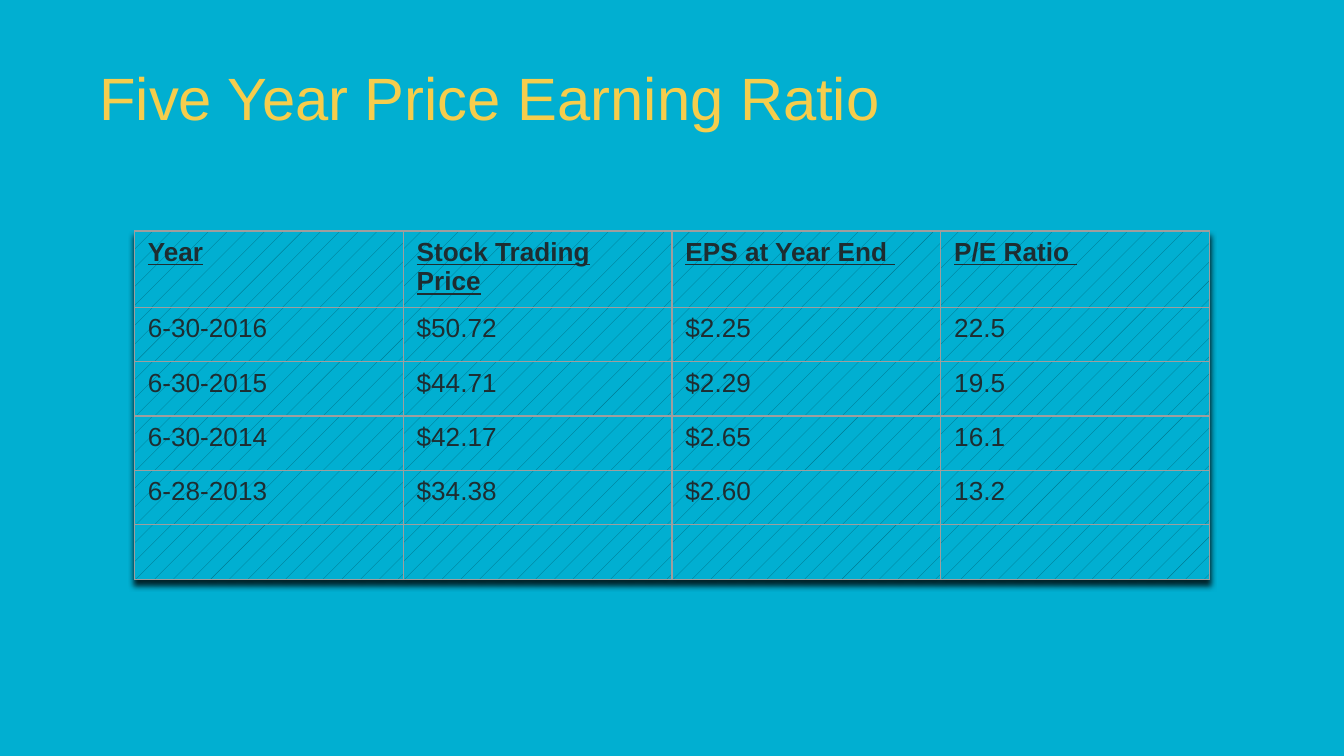
from lxml import etree
from pptx import Presentation
from pptx.dml.color import RGBColor
from pptx.enum.dml import MSO_PATTERN
from pptx.enum.text import MSO_ANCHOR, PP_ALIGN
from pptx.oxml.ns import qn
from pptx.util import Pt

DOTS = MSO_PATTERN.PERCENT_5
BOTTOM = MSO_ANCHOR.BOTTOM
LEFT = PP_ALIGN.LEFT

TEAL = RGBColor(0x01, 0xAF, 0xD1)
DARK_TEAL = RGBColor(0x00, 0x6F, 0x85)
YELLOW = RGBColor(0xF6, 0xCD, 0x4C)
INK = RGBColor(0x1E, 0x2D, 0x31)
GREY = RGBColor(0x9E, 0x9E, 0x9E)
BLACK = RGBColor(0, 0, 0)

ROWS = [
    ("Year", "Stock Trading Price", "EPS at Year End ", "P/E Ratio "),
    ("6-30-2016", "$50.72", "$2.25", "22.5"),
    ("6-30-2015", "$44.71", "$2.29", "19.5"),
    ("6-30-2014", "$42.17", "$2.65", "16.1"),
    ("6-28-2013", "$34.38", "$2.60", "13.2"),
    ("", "", "", ""),
]


def add_color(parent, color):
    fill = etree.SubElement(parent, qn("a:solidFill"))
    etree.SubElement(fill, qn("a:srgbClr"), val=str(color))


class Deck:
    font = "Arial"

    def __init__(self, width, height):
        self.prs = Presentation()
        self.prs.slide_width, self.prs.slide_height = Pt(width), Pt(height)

    def add_slide(self, color):
        self.s = self.prs.slides.add_slide(self.prs.slide_layouts[5])
        self.s.background.fill.solid()
        self.s.background.fill.fore_color.rgb = color

    def style(self, p, size, color, bold=False, underline=False):
        p.alignment = LEFT
        for font in [p.font] + [r.font for r in p.runs]:
            font.name, font.size = self.font, Pt(size)
            font.bold, font.underline = bold, underline
            font.color.rgb = color

    def title(self, text, x, y, w, h):
        sp = self.s.shapes.title
        sp.left, sp.top, sp.width, sp.height = Pt(x), Pt(y), Pt(w), Pt(h)
        tf = sp.text_frame
        tf.text = text
        tf.word_wrap = True
        tf.vertical_anchor = BOTTOM
        self.style(tf.paragraphs[0], 32, YELLOW)

    def borders(self, cell):
        tcPr = cell._tc.get_or_add_tcPr()
        for i, side in enumerate(("lnL", "lnR", "lnT", "lnB")):
            ln = etree.Element(qn("a:" + side), w=str(Pt(0.75)))
            add_color(ln, GREY)
            tcPr.insert(i, ln)

    def shadow(self, table):
        effects = etree.Element(qn("a:effectLst"))
        shadow = etree.SubElement(
            effects, qn("a:outerShdw"), blurRad=str(Pt(3)), dist=str(Pt(3)),
            dir="5400000", algn="ctr", rotWithShape="0")
        color = etree.SubElement(shadow, qn("a:srgbClr"), val=str(BLACK))
        etree.SubElement(color, qn("a:alpha"), val="80000")
        table._tbl.tblPr.insert(0, effects)

    def table(self, rows, x, y, col_w, head_h, row_h):
        n, m = len(rows), len(rows[0])
        height = head_h + (n - 1) * row_h
        table = self.s.shapes.add_table(
            n, m, Pt(x), Pt(y), Pt(m * col_w), Pt(height)).table
        table.first_row = table.horz_banding = False
        self.shadow(table)
        for i, row in enumerate(rows):
            head = i == 0
            table.rows[i].height = Pt(head_h if head else row_h)
            for j, text in enumerate(row):
                cell = table.cell(i, j)
                cell.text = text
                cell.fill.patterned()
                cell.fill.pattern = DOTS
                cell.fill.fore_color.rgb = DARK_TEAL
                cell.fill.back_color.rgb = TEAL
                self.borders(cell)
                self.style(cell.text_frame.paragraphs[0], 14, INK, head, head)


def main():
    deck = Deck(720, 405)
    deck.add_slide(TEAL)

    # Title
    deck.title("Five Year Price Earning Ratio", 46, 28.8, 602, 46)

    # Price, earnings and ratio by year
    deck.table(ROWS, 72, 123.8, col_w=144, head_h=40.8, row_h=29.16)

    deck.prs.save("out.pptx")


if __name__ == "__main__":
    main()
